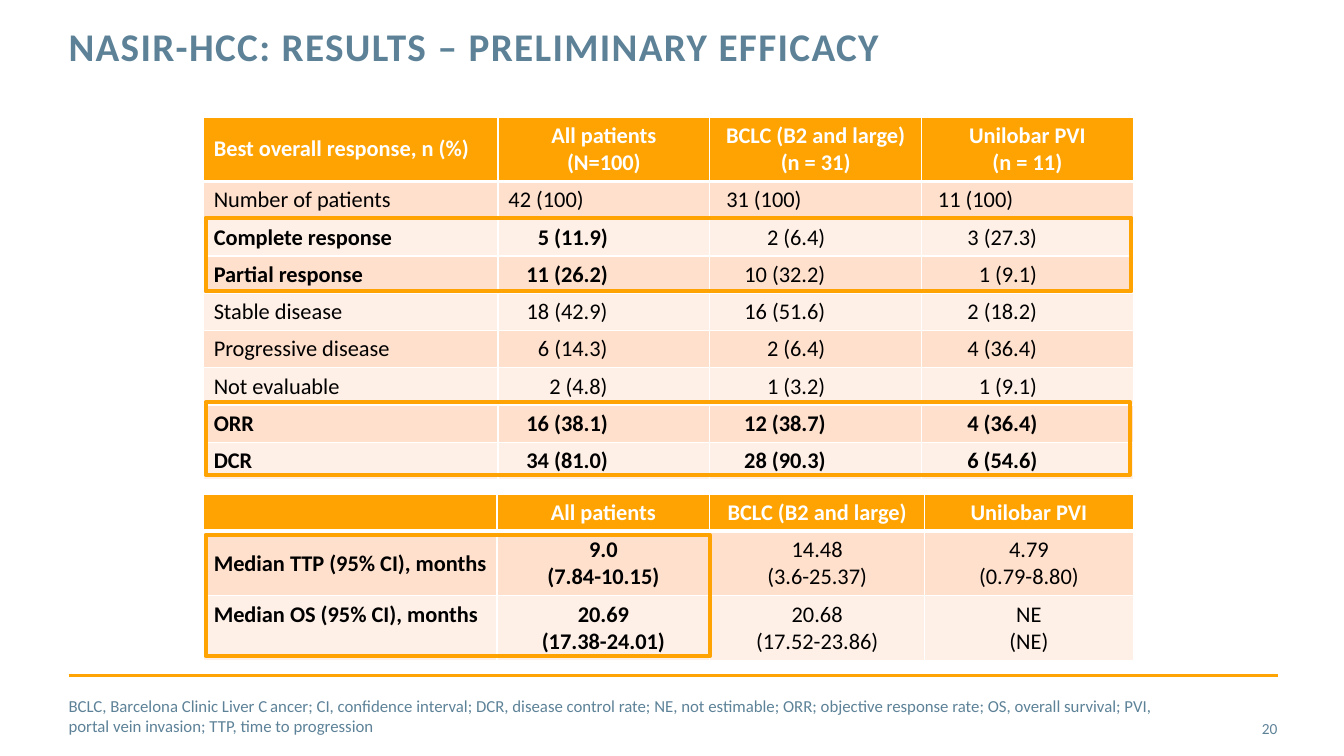
"""Build the NASIR-HCC preliminary efficacy slide."""
from lxml import etree
from pptx import Presentation
from pptx.dml.color import RGBColor
from pptx.enum.shapes import MSO_CONNECTOR, MSO_SHAPE
from pptx.enum.text import MSO_ANCHOR, PP_ALIGN
from pptx.oxml.ns import qn
from pptx.util import Inches, Pt

LEFT, CENTER, RIGHT = PP_ALIGN.LEFT, PP_ALIGN.CENTER, PP_ALIGN.RIGHT
TOP, MIDDLE = MSO_ANCHOR.TOP, MSO_ANCHOR.MIDDLE
RECTANGLE, STRAIGHT = MSO_SHAPE.RECTANGLE, MSO_CONNECTOR.STRAIGHT
FONT = "Calibri"
ORANGE, RULE_ORANGE, SLATE = "FEA302", "FFA402", "5D8298"
WHITE, BLACK, BANDS = "FFFFFF", "000000", ("FFE0CC", "FFF0E7")

TITLE = "NASIR-HCC: RESULTS – PRELIMINARY EFFICACY"
FOOTNOTE = ("BCLC, Barcelona Clinic Liver C\tancer; CI, confidence interval; "
            "DCR, disease control rate; NE, not estimable; ORR; objective response rate; "
            "OS, overall survival; PVI, portal vein invasion; TTP, time to progression")
PAGE = "20"

RESPONSE = [
    ("Best overall response, n (%)", "All patients\n(N=100)",
     "BCLC (B2 and large)\n(n = 31)", "Unilobar PVI\n(n = 11)"),
    ("Number of patients", "42 (100)", "31 (100)", "11 (100)"),
    ("Complete response", "5 (11.9)", "2 (6.4)", "3 (27.3)"),
    ("Partial response", "11 (26.2)", "10 (32.2)", "1 (9.1)"),
    ("Stable disease", "18 (42.9)", "16 (51.6)", "2 (18.2)"),
    ("Progressive disease", "6 (14.3)", "2 (6.4)", "4 (36.4)"),
    ("Not evaluable", "2 (4.8)", "1 (3.2)", "1 (9.1)"),
    ("ORR", "16 (38.1)", "12 (38.7)", "4 (36.4)"),
    ("DCR", "34 (81.0)", "28 (90.3)", "6 (54.6)"),
]
SURVIVAL = [
    ("", "All patients", "BCLC (B2 and large)", "Unilobar PVI"),
    ("Median TTP (95% CI), months", "9.0\n(7.84-10.15)", "14.48\n(3.6-25.37)", "4.79\n(0.79-8.80)"),
    ("Median OS (95% CI), months", "20.69\n(17.38-24.01)", "20.68\n(17.52-23.86)", "NE\n(NE)"),
]
ONE_LINE, TWO_LINES = 0.37, 0.64
TABLE_LEFT = 2.02
TABLES = [
    {"rows": RESPONSE, "top": 1.16, "columns": (2.92, 2.1, 2.1, 2.1),
     "bold": {2: 2, 3: 2, 7: 4, 8: 4}, "tabs": (None, 0.75, 0.81, 0.81), "top_label": None},
    {"rows": SURVIVAL, "top": 4.9, "columns": (2.91, 2.11, 2.13, 2.07),
     "bold": {1: 2, 2: 2}, "tabs": (None,) * 4, "top_label": 2},
]
FRAME_LEFT = 2.04
FRAMES = [(2.16, 9.18, 0.73), (3.99, 9.17, 0.72), (5.31, 5, 1.2)]
LABELS = [
    (TITLE, (0.68, 0.27, 9.56, 0.88), {"size": Pt(28), "bold": True}, LEFT, TOP),
    (PAGE, (11.81, 7.03, 0.86, 0.4), {"size": Pt(11)}, RIGHT, MIDDLE),
    (FOOTNOTE, (0.68, 6.9, 11.13, 0.4), {"size": Pt(12)}, LEFT, MIDDLE),
]


def color(value):
    return RGBColor.from_string(value)


def apply(target, values):
    for name, value in values.items():
        setattr(target, name, value)


def write(paragraph, words, ink, values):
    run = paragraph.add_run()
    run.text = words
    apply(run.font, {"name": FONT, **values})
    run.font.color.rgb = color(ink)
    return run


def add_label(slide, words, place, values, align, anchor):
    frame = slide.shapes.add_textbox(*map(Inches, place)).text_frame
    apply(frame, {"word_wrap": True, "vertical_anchor": anchor, "margin_left": 0,
                  "margin_right": 0, "margin_top": 0, "margin_bottom": 0})
    frame.paragraphs[0].alignment = align
    return write(frame.paragraphs[0], words, SLATE, values)


def set_borders(cell, row):
    widths = {"L": 1, "R": 1, "T": 3 if row == 1 else 1, "B": 3 if row == 0 else 1}
    for side, width in widths.items():
        edge = etree.SubElement(cell._tc.get_or_add_tcPr(), qn(f"a:ln{side}"), w=str(Pt(width)))
        fill = etree.SubElement(edge, qn("a:solidFill"))
        etree.SubElement(fill, qn("a:srgbClr"), val=WHITE)


def fill_cell(cell, words, row, column, spec_of):
    header = row == 0
    tab = None if header else spec_of["tabs"][column]
    bold = header or column < spec_of["bold"].get(row, 0)
    set_borders(cell, row)
    cell.fill.solid()
    cell.fill.fore_color.rgb = color(ORANGE if header else BANDS[(row - 1) % 2])
    cell.vertical_anchor = MIDDLE if column == 0 and row != spec_of["top_label"] else TOP
    for index, line in enumerate(words.split("\n")):
        paragraph = cell.text_frame.paragraphs[0] if index == 0 else cell.text_frame.add_paragraph()
        paragraph.alignment = LEFT if column == 0 or tab else CENTER
        if tab:
            stops = etree.SubElement(paragraph._p.get_or_add_pPr(), qn("a:tabLst"))
            etree.SubElement(stops, qn("a:tab"), pos=str(Inches(tab)), algn="dec")
            line = "\t" + line
        if line:
            write(paragraph, line, WHITE if header else BLACK, {"size": Pt(16), "bold": bold})
        else:
            etree.SubElement(paragraph._p, qn("a:endParaRPr"), sz="1600")


def add_results(slide, results):
    rows, columns = results["rows"], results["columns"]
    heights = [TWO_LINES if any("\n" in words for words in row) else ONE_LINE for row in rows]
    table = slide.shapes.add_table(len(rows), len(columns), *map(
        Inches, (TABLE_LEFT, results["top"], sum(columns), sum(heights)))).table
    for column, width in enumerate(columns):
        table.columns[column].width = Inches(width)
    for row, height in enumerate(heights):
        table.rows[row].height = Inches(height)
        for column, words in enumerate(rows[row]):
            fill_cell(table.cell(row, column), words, row, column, results)


def add_frame(slide, top, width, height):
    frame = slide.shapes.add_shape(RECTANGLE, *map(Inches, (FRAME_LEFT, top, width, height)))
    frame.shadow.inherit = False
    frame.fill.background()
    frame.line.color.rgb = color(ORANGE)
    frame.line.width = Pt(3)


def main():
    deck = Presentation()
    apply(deck, {"slide_width": Inches(13.33), "slide_height": Inches(7.5)})
    slide = deck.slides.add_slide(deck.slide_layouts[6])
    rule = slide.shapes.add_connector(STRAIGHT, *map(Inches, (0.68, 6.7, 12.68, 6.7)))
    rule.line.color.rgb = color(RULE_ORANGE)
    rule.line.width = Pt(2)
    etree.SubElement(rule._element.spPr, qn("a:effectLst"))
    title, *_ = [add_label(slide, *label) for label in LABELS]
    title._r.get_or_add_rPr().set("spc", "100")
    slide.shapes[1].text_frame.paragraphs[0].line_spacing = Pt(30)
    for results in TABLES:
        add_results(slide, results)
    for frame in FRAMES:
        add_frame(slide, *frame)
    deck.save("out.pptx")


if __name__ == "__main__":
    main()
